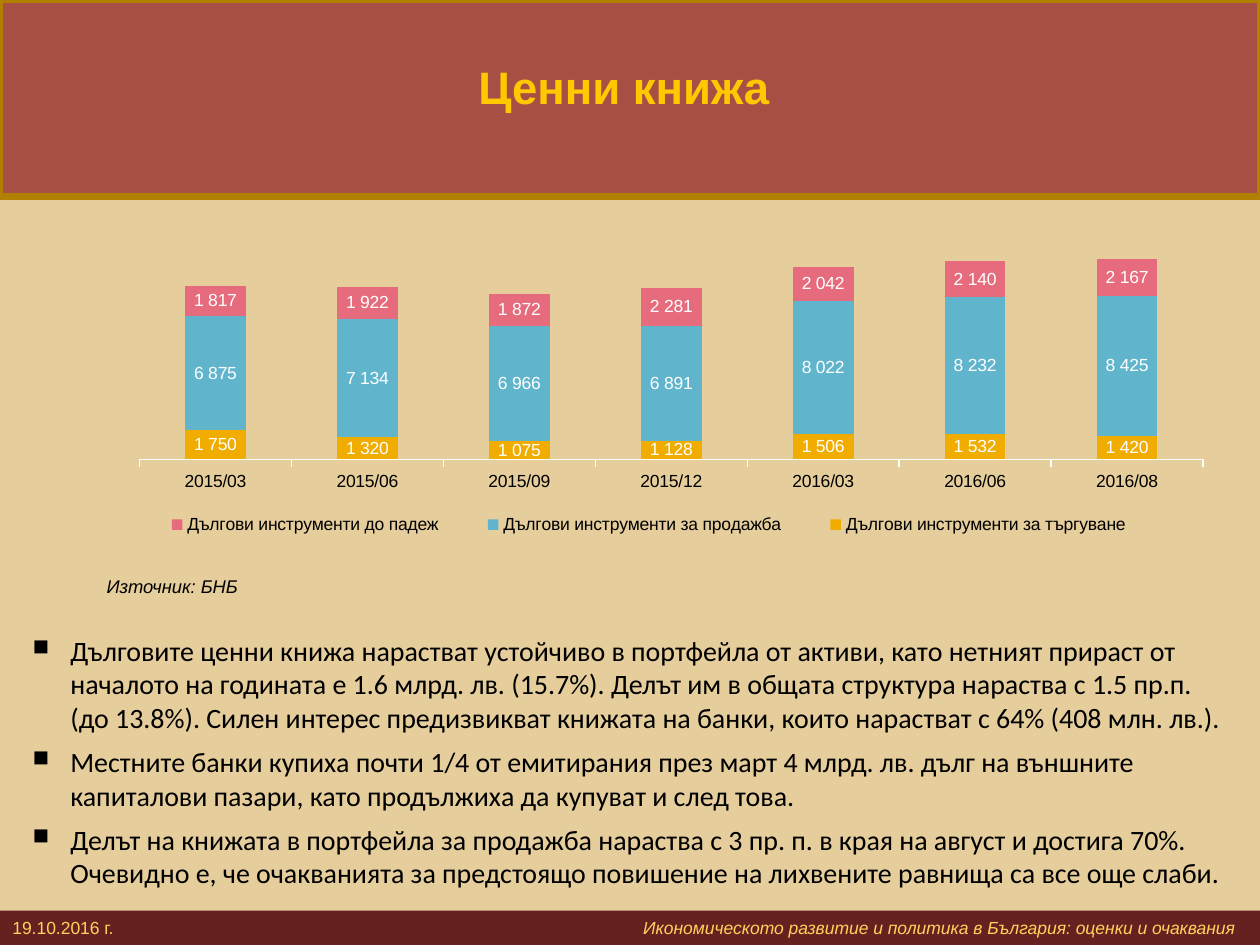
from dataclasses import dataclass
from typing import NamedTuple

from lxml.etree import SubElement
from pptx import Presentation
from pptx.chart.data import CategoryChartData
from pptx.dml.color import RGBColor
from pptx.enum.chart import XL_CHART_TYPE as Chart, XL_LEGEND_POSITION as LegendPos
from pptx.enum.chart import XL_TICK_LABEL_POSITION as LabelPos, XL_TICK_MARK as Tick
from pptx.enum.shapes import MSO_SHAPE as Shape
from pptx.enum.text import MSO_ANCHOR as Anchor, PP_ALIGN as Align
from pptx.oxml import parse_xml
from pptx.oxml.ns import nsdecls, qn
from pptx.util import Cm, Pt


@dataclass(frozen=True)
class Theme:
    background: str = "E5CD9C"
    banner: str = "A84F45"
    banner_line: str = "B28000"
    footer: str = "672020"
    footer_text: str = "FFD25D"
    title: str = "FFC800"
    text: str = "000000"
    light: str = "FFFFFF"
    heading_font: str = "Arial"
    body_font: str = "Calibri"
    title_size: float = 26
    body_size: float = 16
    source_size: float = 10.5
    small_size: float = 10


class Box(NamedTuple):
    left: float
    top: float
    width: float
    height: float

    def lengths(self) -> tuple:
        return tuple(Cm(v) for v in self)


class Series(NamedTuple):
    name: str
    values: tuple
    color: str


THEME = Theme()
PERIODS = ("2015/03", "2015/06", "2015/09", "2015/12", "2016/03", "2016/06", "2016/08")
SERIES = (
    Series("Дългови инструменти за търгуване",
           (1750, 1320, 1075, 1128, 1506, 1532, 1420), "F0AD00"),
    Series("Дългови инструменти за продажба",
           (6875, 7134, 6966, 6891, 8022, 8232, 8425), "60B5CC"),
    Series("Дългови инструменти до падеж",
           (1817, 1922, 1872, 2281, 2042, 2140, 2167), "E66C7D"),
)
BULLETS = (
    "Дълговите ценни книжа нарастват устойчиво в портфейла от активи, като нетният "
    "прираст от началото на годината е 1.6 млрд. лв. (15.7%). Делът им в общата структура "
    "нараства с 1.5 пр.п. (до 13.8%). Силен интерес предизвикват книжата на банки, които "
    "нарастват с 64% (408 млн. лв.).",
    "Местните банки купиха почти 1/4 от емитирания през март 4 млрд. лв. дълг на външните "
    "капиталови пазари, като продължиха да купуват и след това.",
    "Делът на книжата в портфейла за продажба нараства с 3 пр. п. в края на август и "
    "достига 70%. Очевидно е, че очакванията за предстоящо повишение на лихвените равнища "
    "са все още слаби.",
)


def rgb(color: str) -> RGBColor:
    return RGBColor.from_string(color)


def style_font(font, size: float, color: str, name: str = THEME.heading_font,
               bold: bool = False, italic: bool = False) -> None:
    font.size, font.name, font.bold, font.italic = Pt(size), name, bold, italic
    font.color.rgb = rgb(color)


def add_run(p, text: str, **fmt) -> None:
    r = p.add_run()
    r.text = text
    style_font(r.font, **fmt)


def add_text_box(s, box: Box, insets: tuple, wrap: bool = True, anchor=Anchor.TOP):
    tf = s.shapes.add_textbox(*box.lengths()).text_frame
    tf.word_wrap, tf.vertical_anchor = wrap, anchor
    tf.margin_left, tf.margin_top, tf.margin_right, tf.margin_bottom = map(Cm, insets)
    return tf


def add_band(s, box: Box, fill: str, line: str = "", width: float = 0):
    sp = s.shapes.add_shape(Shape.RECTANGLE, *box.lengths())
    sp.shadow.inherit = False
    sp.fill.solid()
    sp.fill.fore_color.rgb = rgb(fill)
    if line:
        sp.line.color.rgb = rgb(line)
        sp.line.width = Pt(width)
    else:
        sp.line.fill.background()
    return sp


def set_bullet(p, indent: float) -> None:
    p_pr = p._p.get_or_add_pPr()
    p_pr.set("marL", str(Cm(indent)))
    p_pr.set("indent", str(-Cm(indent)))
    SubElement(p_pr, qn("a:buSzPct"), val="80000")
    SubElement(p_pr, qn("a:buChar"), char="■")


def set_right_tab(p, position: float) -> None:
    tabs = SubElement(p._p.get_or_add_pPr(), qn("a:tabLst"))
    SubElement(tabs, qn("a:tab"), pos=str(Cm(position)), algn="r")


def chart_layout(x: float, y: float, w: float, h: float, inner: bool = False):
    target = '<c:layoutTarget val="inner"/>' if inner else ""
    return parse_xml(
        f'<c:layout {nsdecls("c")}><c:manualLayout>{target}'
        '<c:xMode val="edge"/><c:yMode val="edge"/>'
        f'<c:x val="{x}"/><c:y val="{y}"/><c:w val="{w}"/><c:h val="{h}"/>'
        '</c:manualLayout></c:layout>')


def add_securities_chart(s, box: Box) -> None:
    data = CategoryChartData()
    data.categories = PERIODS
    for item in SERIES:
        data.add_series(item.name, item.values)
    chart = s.shapes.add_chart(Chart.COLUMN_STACKED, *box.lengths(), data).chart
    chart.has_title = False
    style_font(chart.font, THEME.small_size, THEME.light)

    # Columns and their labels
    plot = chart.plots[0]
    plot.gap_width, plot.overlap, plot.vary_by_categories = 150, 100, False
    for series, item in zip(plot.series, SERIES):
        series.format.fill.solid()
        series.format.fill.fore_color.rgb = rgb(item.color)
        labels = series.data_labels
        labels.show_value = True
        labels.number_format, labels.number_format_is_linked = "#\\ ##0", False
        style_font(labels.font, THEME.small_size, THEME.light)

    # Axes
    axis = chart.category_axis
    axis.major_tick_mark, axis.tick_label_position = Tick.OUTSIDE, LabelPos.LOW
    axis.format.line.color.rgb = rgb(THEME.light)
    style_font(axis.tick_labels.font, THEME.small_size, THEME.text)
    values = chart.value_axis
    values.minimum_scale, values.maximum_scale = 0, 14000
    values.has_major_gridlines = values.visible = False

    # Legend and placement
    chart.has_legend = True
    legend = chart.legend
    legend.position, legend.include_in_layout = LegendPos.RIGHT, False
    style_font(legend.font, THEME.small_size, THEME.text)
    legend._element.find(qn("c:legendPos")).addnext(chart_layout(0.03, 0.87, 0.92, 0.1))
    area = chart._chartSpace.chart.plotArea
    for old in area.findall(qn("c:layout")):
        area.remove(old)
    area.insert(0, chart_layout(0.04, 0.05, 0.94, 0.68, inner=True))


def main() -> None:
    prs = Presentation()
    prs.slide_width, prs.slide_height = Cm(25.4), Cm(19.05)
    s = prs.slides.add_slide(prs.slide_layouts[6])
    s.background.fill.solid()
    s.background.fill.fore_color.rgb = rgb(THEME.background)

    # Title banner
    add_band(s, Box(0, 0, 25.4, 3.96), THEME.banner, THEME.banner_line, 3.78)
    tf = add_text_box(s, Box(1.09, 0, 22.86, 3.48), (0.25, 0.13, 0.13, 0.13),
                      anchor=Anchor.MIDDLE)
    p = tf.paragraphs[0]
    p.alignment = Align.CENTER
    add_run(p, "Ценни книжа", size=THEME.title_size, color=THEME.title, bold=True)

    # Commentary
    tf = add_text_box(s, Box(0.51, 12.52, 24.61, 5.61), (0.15, 0.25, 0.25, 0.13))
    for i, text in enumerate(BULLETS):
        p = tf.add_paragraph() if i else tf.paragraphs[0]
        p.space_before = Pt(6)
        set_bullet(p, 0.76)
        add_run(p, text, size=THEME.body_size, color=THEME.text, name=THEME.body_font)

    # Chart and its source
    tf = add_text_box(s, Box(1.9, 11.46, 3.23, 0.71), (0.25, 0.13, 0.25, 0.13), wrap=False)
    add_run(tf.paragraphs[0], "Източник: БНБ", size=THEME.source_size,
            color=THEME.text, italic=True)
    add_securities_chart(s, Box(1.9, 4.22, 22.81, 6.91))

    # Footer
    tf = add_band(s, Box(0, 18.36, 25.4, 0.69), THEME.footer).text_frame
    tf.vertical_anchor = Anchor.MIDDLE
    p = tf.paragraphs[0]
    p.alignment = Align.LEFT
    set_right_tab(p, 24.64)
    fmt = dict(size=THEME.small_size, color=THEME.footer_text)
    add_run(p, "19.10.2016 г.\t", **fmt)
    add_run(p, "Икономическото развитие и политика в България: оценки и очаквания",
            italic=True, **fmt)

    prs.save("out.pptx")


if __name__ == "__main__":
    main()
